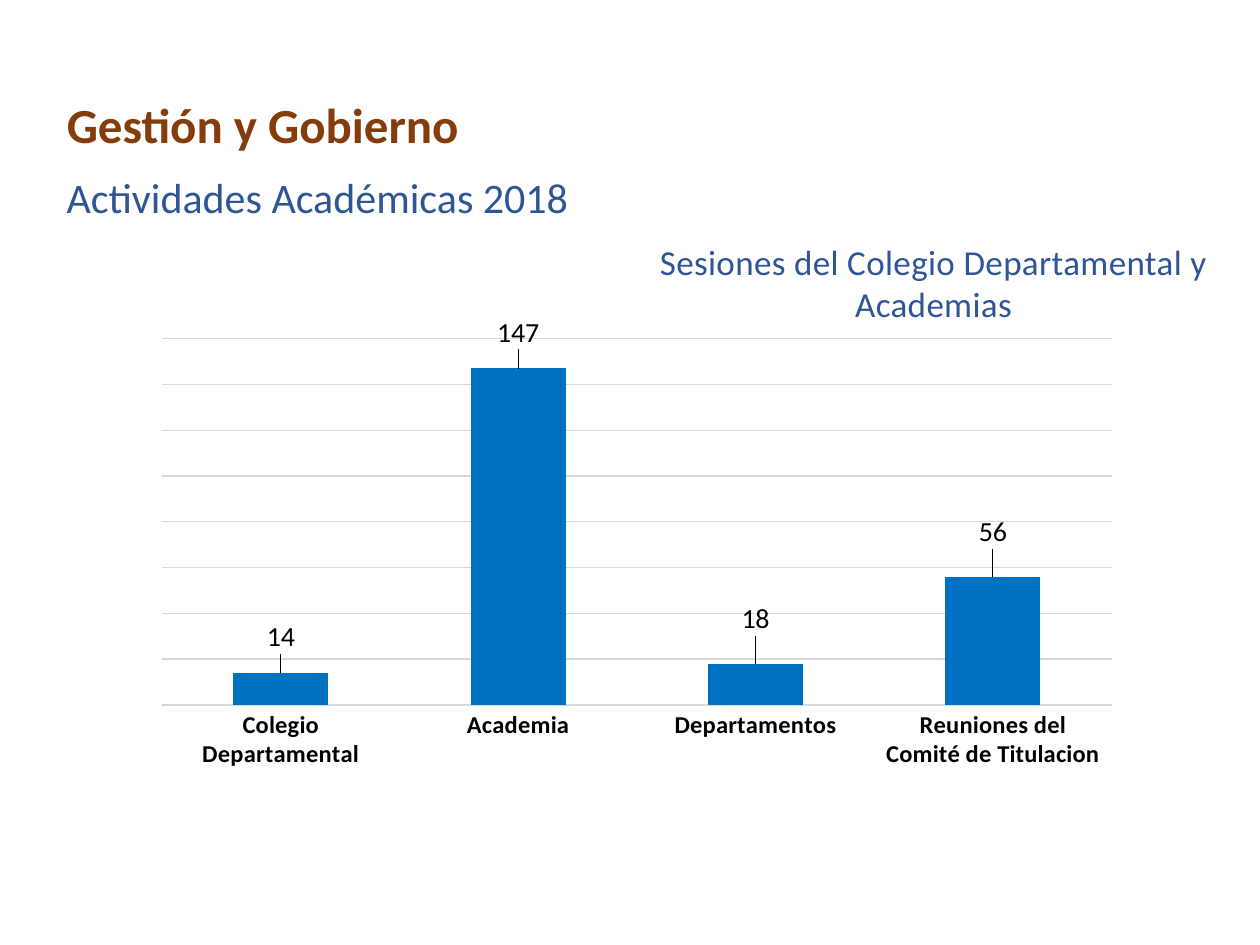
from lxml import etree
from pptx import Presentation
from pptx.chart.data import CategoryChartData
from pptx.dml.color import RGBColor
from pptx.enum.chart import XL_CHART_TYPE, XL_LABEL_POSITION, XL_TICK_MARK
from pptx.enum.text import MSO_ANCHOR, PP_ALIGN
from pptx.oxml import parse_xml
from pptx.oxml.ns import nsdecls, qn
from pptx.util import Inches, Pt

COLUMN_CLUSTERED = XL_CHART_TYPE.COLUMN_CLUSTERED
OUTSIDE_END = XL_LABEL_POSITION.OUTSIDE_END
NO_TICK = XL_TICK_MARK.NONE
TOP = MSO_ANCHOR.TOP
LEFT, CENTER = PP_ALIGN.LEFT, PP_ALIGN.CENTER

FONT = "Calibri"
BROWN, BLUE, BAR_BLUE = "843C0B", "2F5597", "0070C0"
BLACK, GRID_GRAY = "000000", "D9D9D9"

# Category, sessions held, label shift as a share of the chart height
ACTIVITIES = [
    ("Colegio Departamental", 14, -0.03),
    ("Academia", 147, -0.03),
    ("Departamentos", 18, -0.05),
    ("Reuniones del Comité de Titulacion", 56, -0.05),
]


def color(hex_string):
    return RGBColor.from_string(hex_string)


def format_font(font, size, hex_string, bold=False):
    font.name = FONT
    font.size = Pt(size)
    font.bold = bold
    font.color.rgb = color(hex_string)


def write_text(shape, text, size, hex_string, bold=False, align=LEFT, spacing=0):
    frame = shape.text_frame
    frame.word_wrap = True
    frame.vertical_anchor = TOP
    paragraph = frame.paragraphs[0]
    paragraph.alignment = align
    paragraph.line_spacing = 1.0
    run = paragraph.add_run()
    run.text = text
    format_font(run.font, size, hex_string, bold)
    if spacing:
        run.font._element.set("spc", str(round(spacing * 100)))


def add_title(slide, left, top, width, height):
    title = slide.shapes.title
    title.left, title.top, title.width, title.height = left, top, width, height
    write_text(title, "Gestión y Gobierno", 28, BROWN, bold=True)


def add_text(slide, box, text, size, **text_format):
    write_text(slide.shapes.add_textbox(*box), text, size, BLUE, **text_format)


def manual_layout(**values):
    """Return a chart layout element with the given settings in order."""
    layout = parse_xml(f"<c:layout {nsdecls('c')}><c:manualLayout/></c:layout>")
    for name, value in values.items():
        etree.SubElement(layout[0], qn(f"c:{name}")).set("val", str(value))
    return layout


def format_axes(chart):
    category_axis = chart.category_axis
    category_axis.major_tick_mark = NO_TICK
    category_axis.format.line.fill.background()
    format_font(category_axis.tick_labels.font, 14, BLACK, bold=True)

    value_axis = chart.value_axis
    value_axis.minimum_scale, value_axis.maximum_scale = 0, 160
    value_axis.major_unit = 20
    value_axis.has_major_gridlines = True
    grid_line = value_axis.major_gridlines.format.line
    grid_line.color.rgb = color(GRID_GRAY)
    grid_line.width = Pt(0.75)
    value_axis.visible = False


def format_bars(plot):
    plot.gap_width = 150
    plot.vary_by_categories = False
    series = plot.series[0]
    series.format.fill.solid()
    series.format.fill.fore_color.rgb = color(BAR_BLUE)

    labels = series.data_labels
    labels.show_value = True
    labels.position = OUTSIDE_END
    format_font(labels.font, 16, BLACK)

    # Raise each value label above its bar
    for index, (_, _, shift) in enumerate(ACTIVITIES):
        label = series.points[index].data_label
        label.position = OUTSIDE_END
        format_font(label.font, 16, BLACK)
    label_elements = series._element.iter(qn("c:dLbl"))
    for element, (_, _, shift) in zip(label_elements, ACTIVITIES):
        element.insert(1, manual_layout(x=0, y=shift))


def add_sessions_chart(slide, box):
    data = CategoryChartData()
    data.categories = [name for name, _, _ in ACTIVITIES]
    data.add_series("Series 1", [value for _, value, _ in ACTIVITIES])
    chart = slide.shapes.add_chart(COLUMN_CLUSTERED, *box, data).chart
    chart.has_legend = False
    chart.has_title = False
    format_font(chart.font, 10, BLACK)
    format_axes(chart)
    format_bars(chart.plots[0])

    # Fix the inner plot area within the chart frame
    plot_area = chart._chartSpace.chart.plotArea
    for old_layout in plot_area.findall(qn("c:layout")):
        plot_area.remove(old_layout)
    plot_area.insert(0, manual_layout(
        layoutTarget="inner", xMode="edge", yMode="edge",
        x=0.02, y=0.036, w=0.96, h=0.805))


def main():
    presentation = Presentation()
    presentation.slide_width = Inches(10)
    presentation.slide_height = Inches(7.5)
    slide = presentation.slides.add_slide(presentation.slide_layouts[5])

    # Headings
    left = Inches(0.43)
    add_title(slide, left, Inches(0.7), Inches(5.96), Inches(0.57))
    add_text(slide, (left, Inches(1.31), Inches(4.66), Inches(0.5)),
             "Actividades Académicas 2018", 24)

    # Chart and its caption
    add_text(slide, (Inches(5.06), Inches(1.86), Inches(4.7), Inches(0.77)),
             "Sesiones del Colegio Departamental y Academias", 20,
             align=CENTER, spacing=0.2)
    add_sessions_chart(
        slide, (Inches(1.13), Inches(2.51), Inches(7.85), Inches(3.66)))

    presentation.save("out.pptx")


if __name__ == "__main__":
    main()
